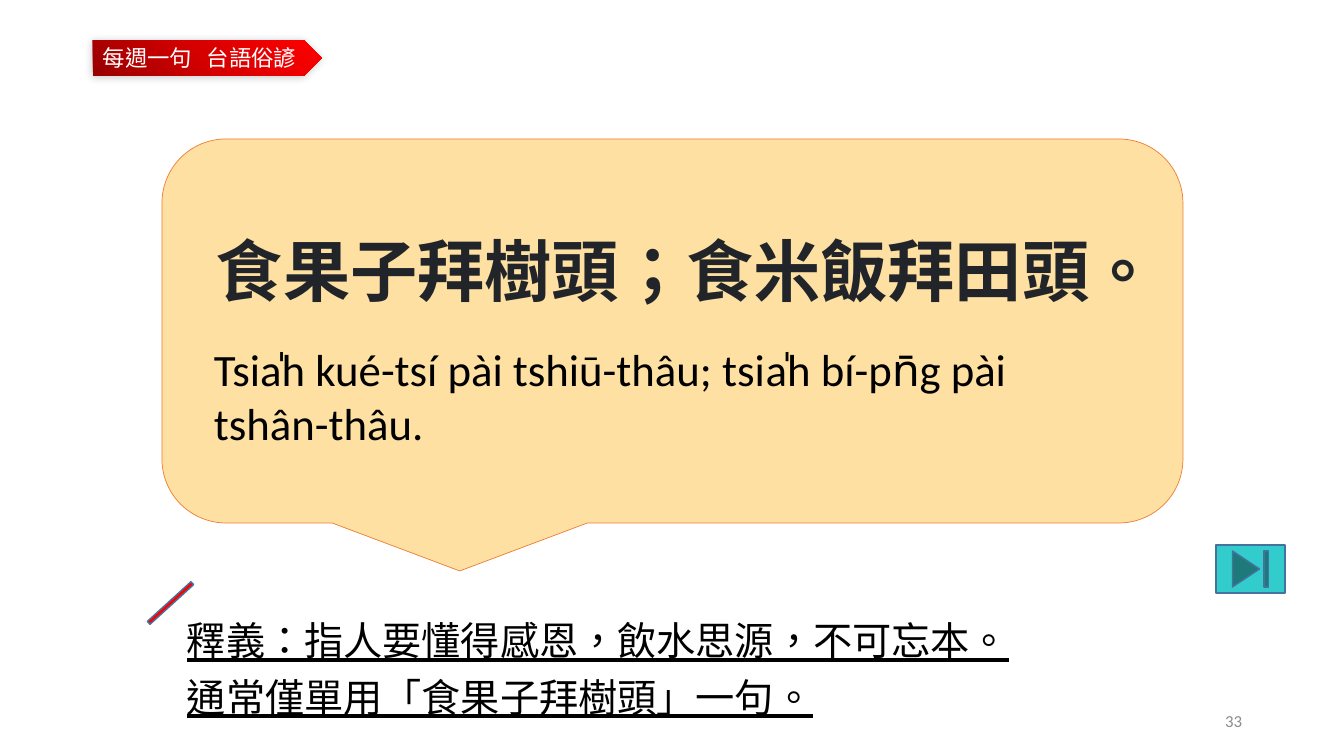
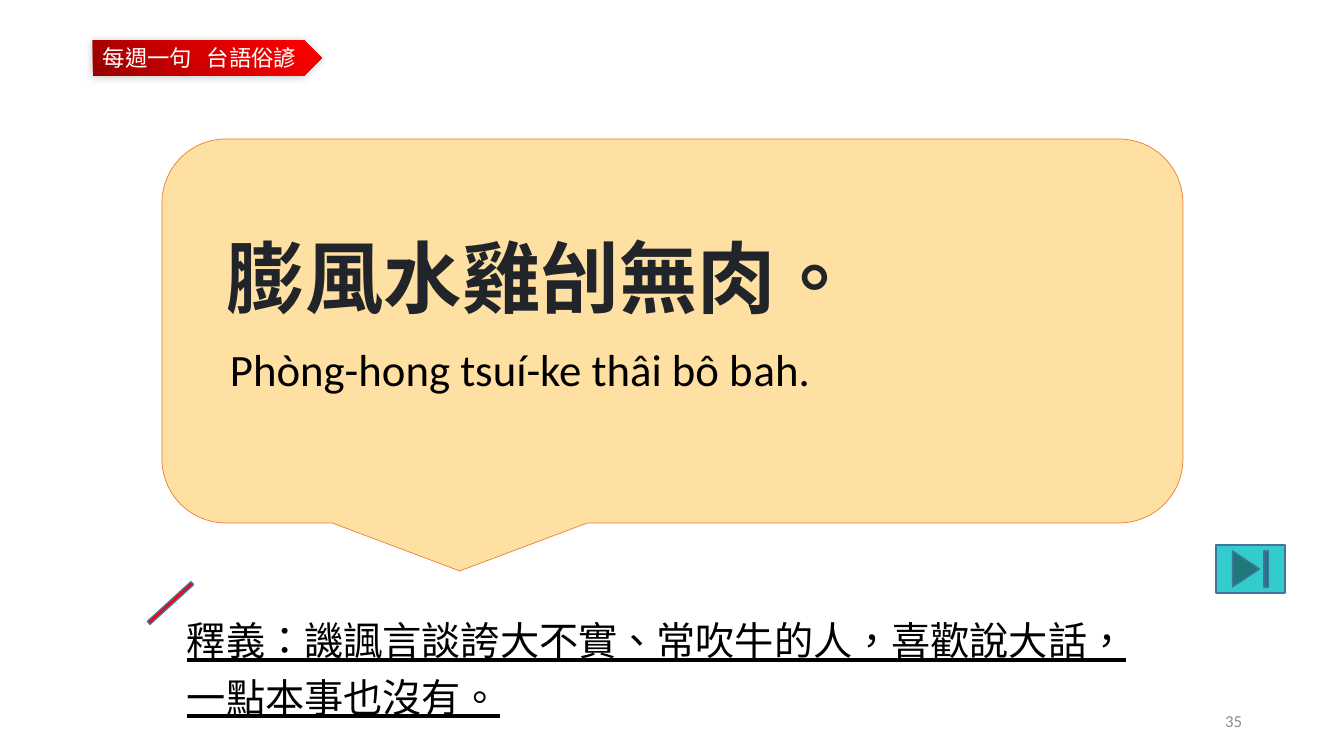
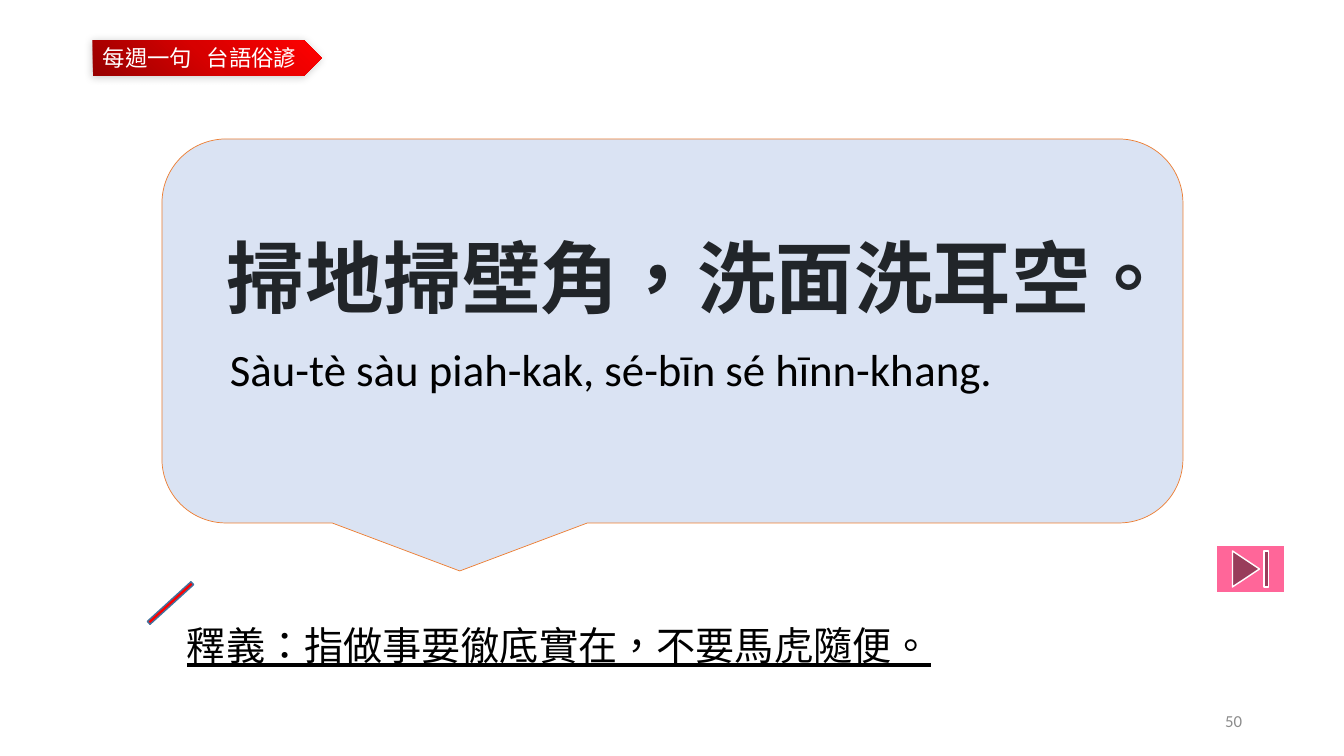
from lxml import etree
from pptx import Presentation
from pptx import util as u
from pptx.dml.color import RGBColor
from pptx.enum import lang, shapes, text
from pptx.oxml import parse_xml
from pptx.oxml.ns import nsdecls, qn

PX = 12192000 / 1344
rgb = RGBColor.from_string
MIDDLE = text.MSO_ANCHOR.MIDDLE
LEFT, RIGHT = text.PP_ALIGN.LEFT, text.PP_ALIGN.RIGHT

RIBBON_GRADIENT = f"""<a:gradFill {nsdecls('a')} rotWithShape="1"><a:gsLst>
<a:gs pos="0"><a:srgbClr val="970000"/></a:gs>
<a:gs pos="50000"><a:srgbClr val="D70000"/></a:gs>
<a:gs pos="100000"><a:srgbClr val="FF0000"/></a:gs>
</a:gsLst><a:lin ang="18900000" scaled="1"/></a:gradFill>"""
RIBBON_SHADOW = f"""<a:effectLst {nsdecls('a')}>
<a:outerShdw blurRad="76200" dist="12700" dir="8100000" algn="tr" rotWithShape="0">
<a:srgbClr val="000000"><a:alpha val="20000"/></a:srgbClr></a:outerShdw></a:effectLst>"""


def add_figure(slide, preset, box, fill, line, width):
    figure = slide.shapes.add_shape(preset, *[u.Emu(round(n * PX)) for n in box])
    figure.shadow.inherit = False
    figure.fill.solid()
    figure.fill.fore_color.rgb = rgb(fill)
    if line:
        figure.line.color.rgb = rgb(line)
        figure.line.width = u.Pt(width)
    else:
        figure.line.fill.background()
    return figure


def write(frame, lines, size, color, align=LEFT, font="Calibri", tab=None):
    frame.word_wrap = True
    frame.text = "\n".join(lines)
    for paragraph in frame.paragraphs:
        paragraph.alignment = align
        if tab:
            stops = etree.SubElement(paragraph._p.get_or_add_pPr(), qn("a:tabLst"))
            etree.SubElement(stops, qn("a:tab"), pos=str(round(tab * PX)), algn="l")
        paragraph.font.size = u.Pt(size)
        paragraph.font.color.rgb = rgb(color)
        paragraph.font.name = font
        paragraph.font.language_id = lang.MSO_LANGUAGE_ID.TRADITIONAL_CHINESE
        east_asian = etree.SubElement(paragraph.font._element, qn("a:ea"))
        east_asian.set("typeface", "Calibri")
    return frame.paragraphs


proverbs = [
    dict(number="33", saying="食果子拜樹頭；食米飯拜田頭。", saying_size=48,
         saying_box=(206, 224, 959, 92),
         reading=["Tsia̍h kué-tsí pài tshiū-thâu; tsia̍h bí-pn̄g pài", "tshân-thâu."],
         reading_box=(204, 337, 961, 119),
         meaning=["釋義：指人要懂得感恩，飲水思源，不可忘本。", "通常僅單用「食果子拜樹頭」一句。"],
         meaning_box=(177, 617, 1127, 120),
         bubble="FFCC66", opacity=60, button="33CCCC", button_line="43739E"),
    dict(number="35", saying="膨風水雞刣無肉。", saying_size=56,
         saying_box=(217, 224, 925, 105),
         reading=["Phòng-hong tsuí-ke thâi bô bah."],
         reading_box=(220, 337, 921, 65),
         meaning=["釋義：譏諷言談誇大不實、常吹牛的人，喜歡說大話，", "一點本事也沒有。"],
         meaning_box=(177, 617, 1092, 120),
         bubble="FFCC66", opacity=60, button="33CCCC", button_line="43739E"),
    dict(number="50", saying="掃地掃壁角，洗面洗耳空。", saying_size=56,
         saying_box=(217, 224, 950, 105),
         reading=["Sàu-tè sàu piah-kak, sé-bīn sé hīnn-khang."],
         reading_box=(220, 337, 947, 65),
         meaning=["釋義：指做事要徹底實在，不要馬虎隨便。"],
         meaning_box=(177, 622, 1035, 121),
         bubble="DAE3F3", opacity=100, button="FF6699", button_line="FFFFFF"),
]

deck = Presentation()
deck.slide_width, deck.slide_height = u.Emu(12192000), u.Emu(6858000)

for proverb in proverbs:
    slide = deck.slides.add_slide(deck.slide_layouts[6])

    ribbon = add_figure(slide, shapes.MSO_SHAPE.PENTAGON, (93, 40, 229, 36), "D70000", None, 0)
    ribbon_props = ribbon._element.spPr
    ribbon_props.replace(ribbon_props.find(qn("a:solidFill")), parse_xml(RIBBON_GRADIENT))
    ribbon_props.replace(ribbon_props.find(qn("a:effectLst")), parse_xml(RIBBON_SHADOW))
    ribbon.text_frame.vertical_anchor = MIDDLE
    ribbon.text_frame.margin_right = 0
    write(ribbon.text_frame, ["每週一句\t台語俗諺"], 16, "FFFFFF", tab=104)

    stroke = add_figure(slide, shapes.MSO_SHAPE.RECTANGLE, (141, 601, 59, 4), "FF0000", "43739E", 1)
    stroke.rotation = 317.7

    bubble = add_figure(slide, shapes.MSO_SHAPE.ROUNDED_RECTANGULAR_CALLOUT,
                        (162, 139, 1021, 384), proverb["bubble"], "ED7D31", 0.5)
    if proverb["opacity"] < 100:
        bubble_color = bubble._element.spPr.find(qn("a:solidFill"))[0]
        etree.SubElement(bubble_color, qn("a:alpha"), val=str(proverb["opacity"] * 1000))

    meaning, saying, reading, number = [
        slide.shapes.add_textbox(*[u.Emu(round(n * PX)) for n in box]).text_frame
        for box in (proverb["meaning_box"], proverb["saying_box"],
                    proverb["reading_box"], (950, 701, 302, 40))]

    for index, paragraph in enumerate(
            write(meaning, proverb["meaning"], 28, "000000", font="Noto Sans CJK SC")):
        paragraph.line_spacing = 0.9
        paragraph.space_before = u.Pt(10 if index else 0)
        paragraph.font.underline = True
    write(saying, [proverb["saying"]], proverb["saying_size"], "212529")[0].font.bold = True
    write(reading, proverb["reading"], 32, "000000")
    number.vertical_anchor = MIDDLE
    write(number, [proverb["number"]], 12, "8C8C8C", RIGHT)

    add_figure(slide, shapes.MSO_SHAPE.ACTION_BUTTON_END, (1216, 545, 69, 48),
               proverb["button"], proverb["button_line"], 1)

deck.save("out.pptx")
